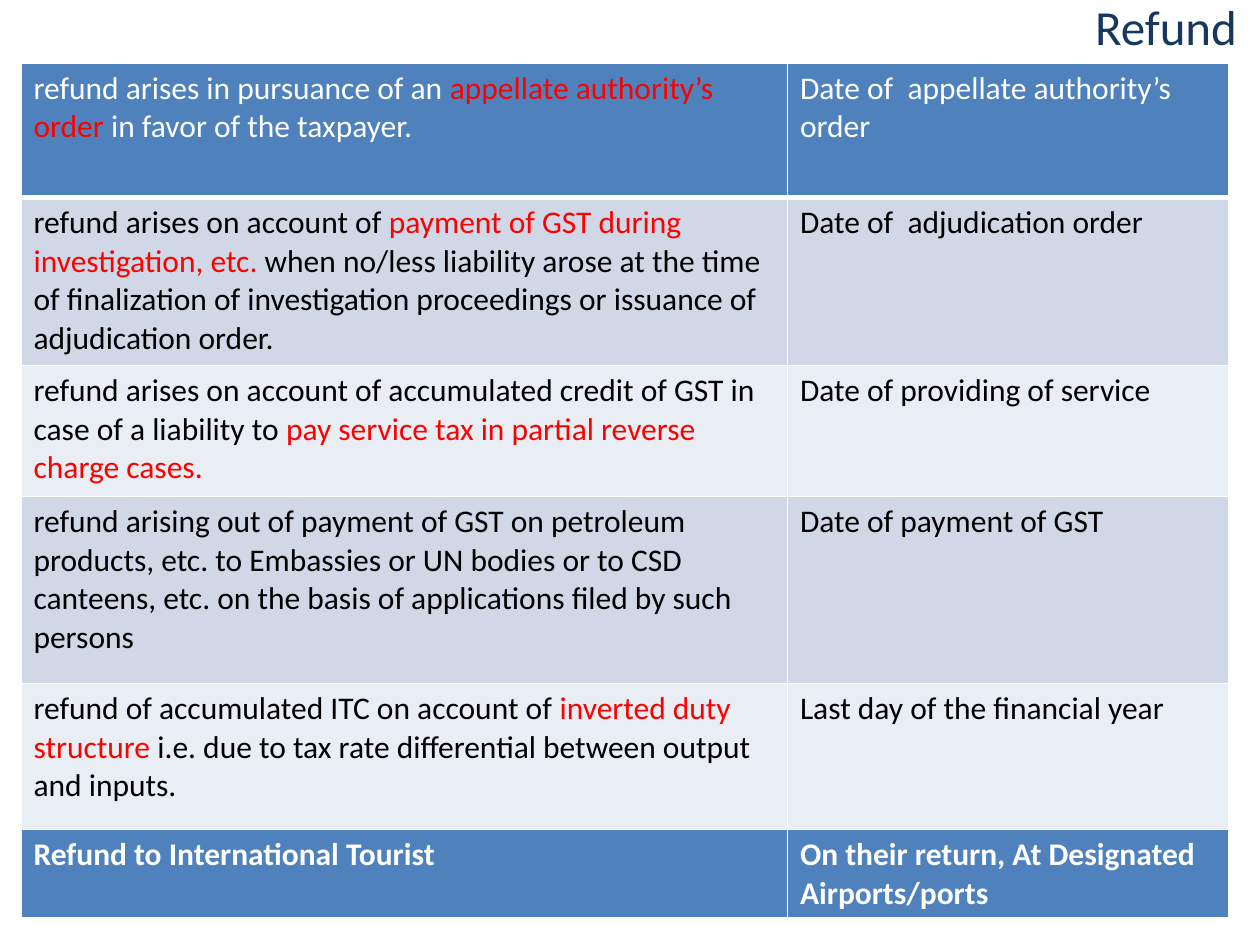
import pptx
import pptx.dml.color
import pptx.enum.text
import pptx.oxml
import pptx.oxml.ns
import pptx.util

WHITE, BLACK, RED, NAVY = "FFFFFF", "000000", "FF0000", "17375E"
HEADER, DARK_BAND, LIGHT_BAND = "4F81BD", "D0D8E8", "E9EDF4"
COLUMN_WIDTHS = [73, 42]

REFUND_ROWS = [
    (12.8, [("refund arises in pursuance of an ", "appellate authority’s order",
             " in favor of the taxpayer."),
            ("Date of  appellate authority’s order",)]),
    (16, [("refund arises on account of ", "payment of GST during investigation, etc. ",
           "when no/less liability arose at the time of finalization of investigation "
           "proceedings or issuance of adjudication order."),
          ("Date of  adjudication order",)]),
    (12.5, [("refund arises on account of accumulated credit of GST in case of a liability to ",
             "pay service tax in partial reverse charge cases."),
            ("Date of providing of service",)]),
    (17.8, [("refund arising out of payment of GST on petroleum products, etc. to Embassies "
             "or UN bodies or to CSD canteens, etc. on the basis of applications filed by "
             "such persons",),
            ("Date of payment of GST",)]),
    (22, [("refund of accumulated ITC on account of ", "inverted duty structure ",
           "i.e. due to tax rate differential between output and inputs."),
          ("Last day of the financial year",)]),
]
TOURIST_ROWS = [
    (8.4, [("Refund to International Tourist",),
           ("On their return, At Designated Airports/ports",)]),
]


def color(value):
    return pptx.dml.color.RGBColor.from_string(value)


def add_text(para, text, size=18, fill=BLACK, bold=False, font="Calibri"):
    span = para.add_run()
    span.text = text
    span.font.name = font
    span.font.size = pptx.util.Pt(size)
    span.font.bold = bold
    span.font.color.rgb = color(fill)


class SlideBuilder:
    columns, rows = 120, 90

    def __init__(self, deck):
        self.column = deck.slide_width / self.columns
        self.row = deck.slide_height / self.rows
        self.slide = deck.slides.add_slide(deck.slide_layouts[5])

    def place(self, left, top, width, height):
        return (round(left * self.column), round(top * self.row),
                round(width * self.column), round(height * self.row))

    def title(self, text, *position):
        box = self.slide.shapes.title
        box.left, box.top, box.width, box.height = self.place(*position)
        frame = box.text_frame
        frame.vertical_anchor = pptx.enum.text.MSO_ANCHOR.MIDDLE
        frame.auto_size = pptx.enum.text.MSO_AUTO_SIZE.NONE
        para = frame.paragraphs[0]
        para.alignment = pptx.enum.text.PP_ALIGN.RIGHT
        add_text(para, text, size=28, fill=NAVY)

    def borders(self, cell, header):
        properties = cell._tc.get_or_add_tcPr()
        for index, side in enumerate("LRTB"):
            width = pptx.util.Pt(3 if header and side == "B" else 1)
            properties.insert(index, pptx.oxml.parse_xml(
                f'<a:ln{side} {pptx.oxml.ns.nsdecls("a")} w="{width}">'
                f'<a:solidFill><a:srgbClr val="{WHITE}"/></a:solidFill></a:ln{side}>'))

    def cell(self, cell, texts, row_index, header_bold):
        header = row_index == 0
        cell.fill.solid()
        cell.fill.fore_color.rgb = color(
            HEADER if header else DARK_BAND if row_index % 2 else LIGHT_BAND)
        self.borders(cell, header)
        para = cell.text_frame.paragraphs[0]
        for index, text in enumerate(texts):
            fill = RED if index == 1 else WHITE if header else BLACK
            add_text(para, text, fill=fill, bold=header and header_bold)

    def table(self, rows, left, top, header_bold=False):
        position = self.place(left, top, sum(COLUMN_WIDTHS), sum(height for height, _ in rows))
        table = self.slide.shapes.add_table(len(rows), len(COLUMN_WIDTHS), *position).table
        for column, width in zip(table.columns, COLUMN_WIDTHS):
            column.width = round(width * self.column)
        for row_index, (height, cells) in enumerate(rows):
            table.rows[row_index].height = round(height * self.row)
            for column_index, texts in enumerate(cells):
                self.cell(table.cell(row_index, column_index), texts, row_index, header_bold)


def main():
    deck = pptx.Presentation()
    deck.slide_width = pptx.util.Inches(10)
    deck.slide_height = pptx.util.Inches(7.5)
    builder = SlideBuilder(deck)
    builder.title("Refund", 99, 1, 20, 3)
    builder.table(REFUND_ROWS, 2, 6)
    builder.table(TOURIST_ROWS, 2, 79, header_bold=True)
    deck.save("out.pptx")


if __name__ == "__main__":
    main()
